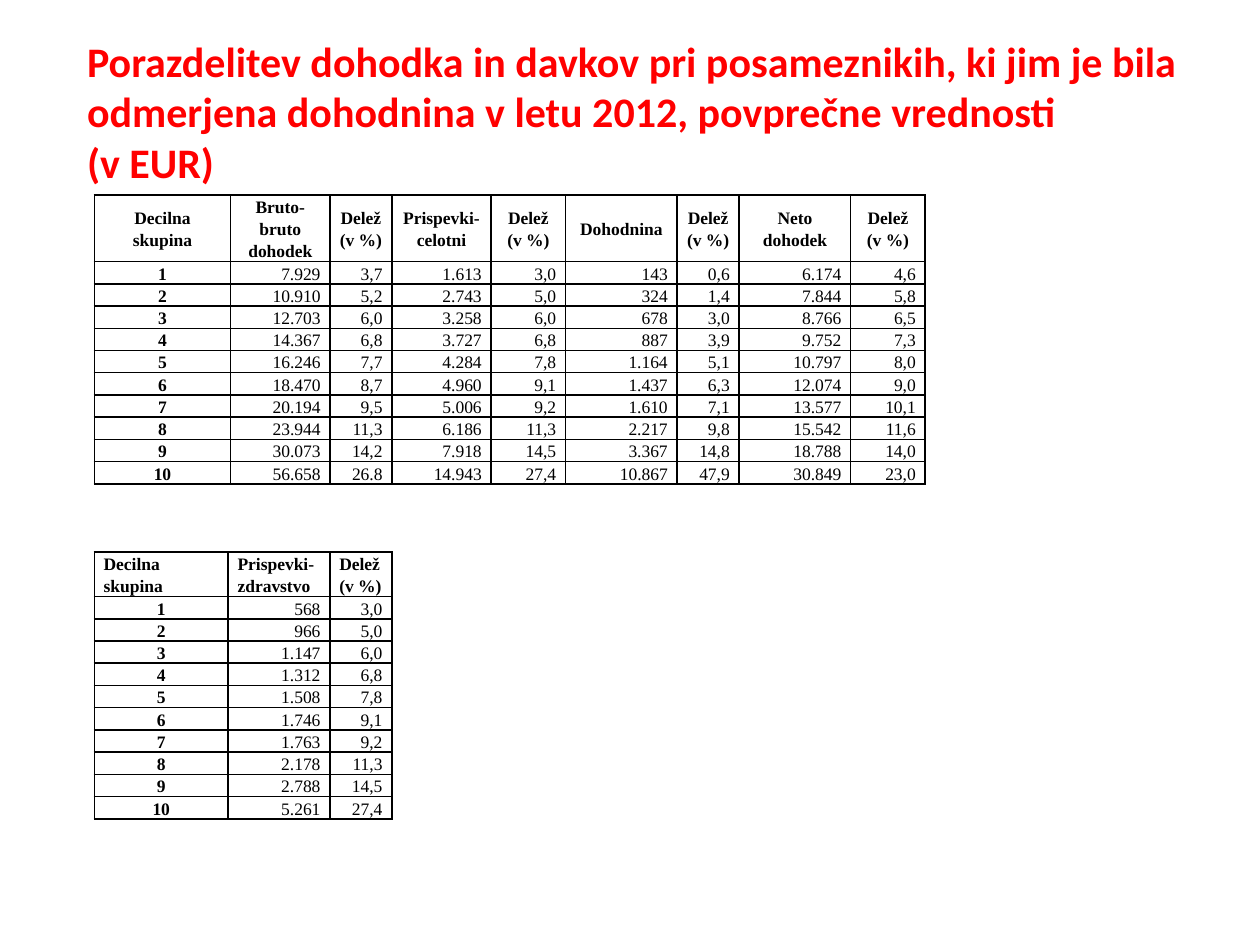
from lxml.etree import SubElement
from pptx import Presentation
from pptx.dml.color import RGBColor
from pptx.enum.text import MSO_ANCHOR as Anchor, PP_ALIGN as Align
from pptx.oxml.ns import qn
from pptx.util import Cm, Pt

BLACK, RED = "000000", "FF0000"
LINE_HEIGHT = 0.448


def add_span(para, text, font, size, color, bold):
    span = para.add_run()
    span.text = text
    span.font.name = font
    span.font.size = Pt(size)
    span.font.bold = bold
    span.font.color.rgb = RGBColor.from_string(color)


def add_borders(cell, color):
    properties = cell._tc.get_or_add_tcPr()
    for side in ("lnL", "lnR", "lnT", "lnB"):
        line = SubElement(properties, qn(f"a:{side}"), w=str(Pt(1)))
        fill = SubElement(line, qn("a:solidFill"))
        SubElement(fill, qn("a:srgbClr"), val=color)


deck = Presentation()
deck.slide_width, deck.slide_height = Cm(25.4), Cm(19.05)
page = deck.slides.add_slide(deck.slide_layouts[5])

title = page.shapes.title
title.left, title.top, title.width, title.height = Cm(1.5), Cm(0.74), Cm(22.6), Cm(3)
title.text_frame.word_wrap = True
title.text_frame.vertical_anchor = Anchor.MIDDLE
para = title.text_frame.paragraphs[0]
para.alignment = Align.LEFT
add_span(para, "Porazdelitev dohodka in davkov pri posameznikih, ki jim je bila "
         "odmerjena dohodnina v letu 2012, povprečne vrednosti", "Calibri", 24, RED, True)
para.add_line_break()
add_span(para, "(v EUR)", "Calibri", 24, RED, True)

income_header = ["Decilna skupina", "Bruto-bruto dohodek", "Delež(v %)",
                 "Prispevki-celotni", "Delež (v %)", "Dohodnina", "Delež(v %)",
                 "Neto dohodek", "Delež (v %)"]
income_rows = """
7.929 3,7 1.613 3,0 143 0,6 6.174 4,6
10.910 5,2 2.743 5,0 324 1,4 7.844 5,8
12.703 6,0 3.258 6,0 678 3,0 8.766 6,5
14.367 6,8 3.727 6,8 887 3,9 9.752 7,3
16.246 7,7 4.284 7,8 1.164 5,1 10.797 8,0
18.470 8,7 4.960 9,1 1.437 6,3 12.074 9,0
20.194 9,5 5.006 9,2 1.610 7,1 13.577 10,1
23.944 11,3 6.186 11,3 2.217 9,8 15.542 11,6
30.073 14,2 7.918 14,5 3.367 14,8 18.788 14,0
56.658 26.8 14.943 27,4 10.867 47,9 30.849 23,0
"""
health_header = ["Decilna skupina", "Prispevki-zdravstvo", "Delež(v %)"]
health_rows = """
568 3,0
966 5,0
1.147 6,0
1.312 6,8
1.508 7,8
1.746 9,1
1.763 9,2
2.178 11,3
2.788 14,5
5.261 27,4
"""

# Top, column widths, header lines, header alignment, header, decile rows
tables = [
    (3.93, [2.75, 2, 1.25, 2, 1.5, 2.25, 1.25, 2.25, 1.5], 3, Align.CENTER,
     income_header, income_rows),
    (11.13, [2.7, 2.05, 1.25], 2, Align.JUSTIFY, health_header, health_rows),
]

for top, widths, header_lines, header_align, header, decile_rows in tables:
    deciles = [line.split() for line in decile_rows.strip().splitlines()]
    rows = [header] + [[str(number), *values] for number, values in enumerate(deciles, 1)]
    heights = [header_lines * LINE_HEIGHT] + [LINE_HEIGHT] * len(deciles)
    table = page.shapes.add_table(len(rows), len(widths), Cm(1.9), Cm(top),
                                  Cm(sum(widths)), Cm(sum(heights))).table
    table.first_row = table.horz_banding = False
    for column, width in zip(table.columns, widths):
        column.width = Cm(width)
    for row, height in zip(table.rows, heights):
        row.height = Cm(height)

    for row_index, texts in enumerate(rows):
        for column_index, text in enumerate(texts):
            cell = table.cell(row_index, column_index)
            cell.margin_left = cell.margin_right = Cm(0.19)
            cell.margin_top = cell.margin_bottom = 0
            cell.vertical_anchor = Anchor.MIDDLE
            add_borders(cell, BLACK)
            cell.fill.background()
            para = cell.text_frame.paragraphs[0]
            para.line_spacing = 1.15
            if row_index == 0:
                para.alignment = header_align
            else:
                para.alignment = Align.CENTER if column_index == 0 else Align.RIGHT
            bold = row_index == 0 or column_index == 0
            add_span(para, text, "Times New Roman", 10, BLACK, bold)

deck.save("out.pptx")
